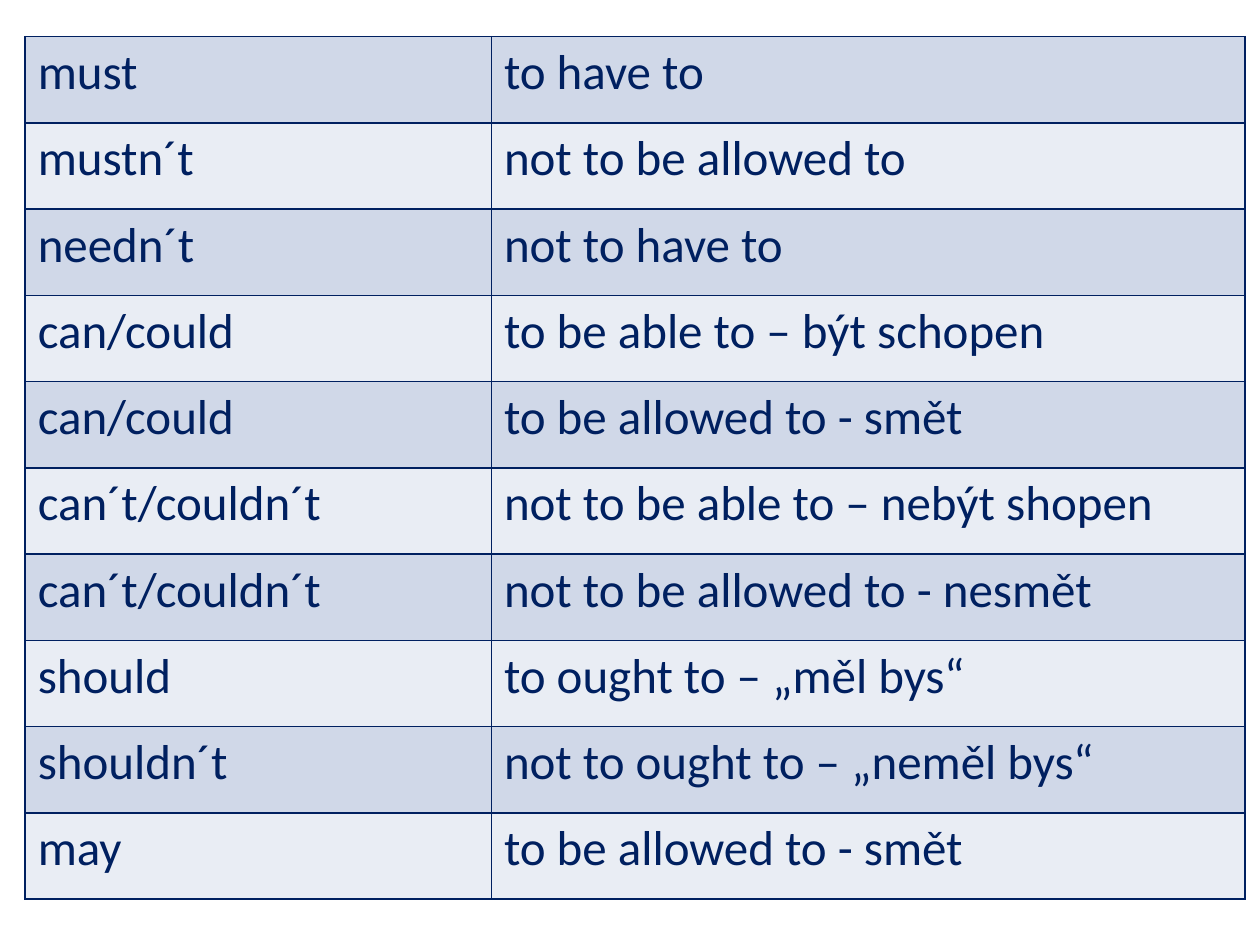
from dataclasses import dataclass
from typing import NamedTuple

from lxml.etree import SubElement as Sub
from pptx import Presentation
from pptx.dml.color import RGBColor as RGB
from pptx.oxml.ns import qn
from pptx.util import Inches, Pt


@dataclass(frozen=True)
class Theme:
    font: str = "Calibri"
    size: int = 28
    ink: str = "002060"
    bands: tuple[str, str] = ("D0D8E8", "E9EDF4")
    line: int = 1


class Verb(NamedTuple):
    modal: str
    phrase: str


THEME = Theme()
LEFT, TOP = 0.2, 0.29
COLS = (3.7, 5.98)
HEIGHT = 6.85

VERBS = [
    Verb("must", "to have to"),
    Verb("mustn´t", "not to be allowed to"),
    Verb("needn´t", "not to have to"),
    Verb("can/could", "to be able to – být schopen"),
    Verb("can/could", "to be allowed to - smět"),
    Verb("can´t/couldn´t", "not to be able to – nebýt shopen"),
    Verb("can´t/couldn´t", "not to be allowed to - nesmět"),
    Verb("should", "to ought to – „měl bys“"),
    Verb("shouldn´t", "not to ought to – „neměl bys“"),
    Verb("may", "to be allowed to - smět"),
]


def write(frame, text: str, *, font: str = THEME.font,
          size: int = THEME.size, color: str = THEME.ink) -> None:
    run = frame.paragraphs[0].add_run()
    run.text = text
    run.font.name = font
    run.font.size = Pt(size)
    run.font.color.rgb = RGB.from_string(color)


def add_border(cell, color: str, width: int) -> None:
    """Line all four sides; call before the fill, which must follow in the XML."""
    props = cell._tc.get_or_add_tcPr()
    for side in ("lnL", "lnR", "lnT", "lnB"):
        line = Sub(props, qn(f"a:{side}"), w=str(Pt(width)))
        fill = Sub(line, qn("a:solidFill"))
        Sub(fill, qn("a:srgbClr"), val=color)


def add_grid(slide, verbs: list[Verb]) -> None:
    frame = slide.shapes.add_table(
        len(verbs), len(COLS), Inches(LEFT), Inches(TOP),
        Inches(sum(COLS)), Inches(HEIGHT))
    table = frame.table
    for col, width in zip(table.columns, COLS):
        col.width = Inches(width)
    for i, (row, verb) in enumerate(zip(table.rows, verbs)):
        row.height = Inches(HEIGHT / len(verbs))
        for cell, text in zip(row.cells, verb):
            write(cell.text_frame, text)
            add_border(cell, THEME.ink, THEME.line)
            cell.fill.solid()
            cell.fill.fore_color.rgb = RGB.from_string(THEME.bands[i % 2])


def main() -> None:
    deck = Presentation()
    deck.slide_width, deck.slide_height = Inches(10), Inches(7.5)
    slide = deck.slides.add_slide(deck.slide_layouts[6])
    add_grid(slide, VERBS)
    deck.save("out.pptx")


if __name__ == "__main__":
    main()
